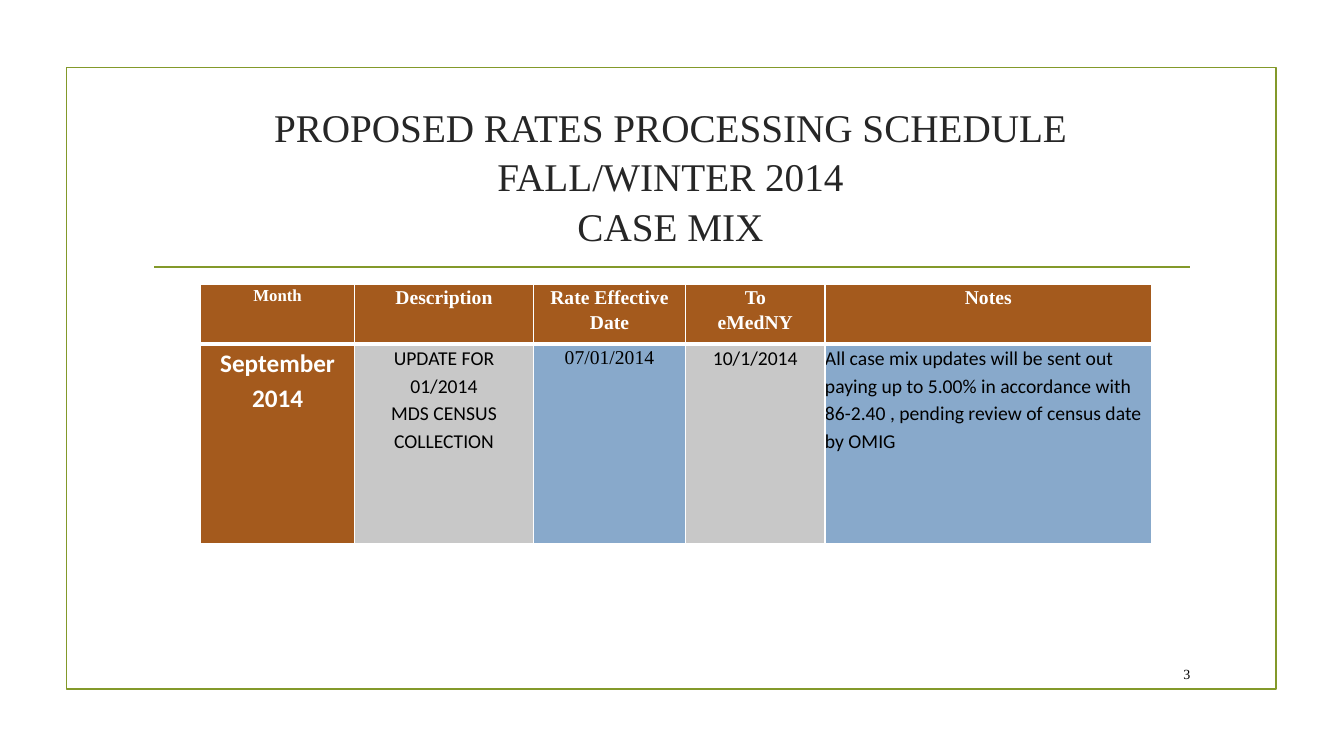
"""Build the case mix rates processing schedule slide."""
import pptx
import pptx.dml.color
import pptx.enum.shapes
import pptx.enum.text
import pptx.oxml
import pptx.oxml.ns
import pptx.util

Cm, Pt = pptx.util.Cm, pptx.util.Pt
ALIGN = pptx.enum.text.PP_ALIGN
MIDDLE = pptx.enum.text.MSO_ANCHOR.MIDDLE
OLIVE, BROWN, GREY, BLUE = "83992A", "A45A1D", "C8C8C8", "88A9CB"
WHITE, BLACK, CHARCOAL = "FFFFFF", "000000", "262626"
SERIF, SANS = "Times New Roman", "Calibri"


def color(code):
    return pptx.dml.color.RGBColor.from_string(code)


def format_text(para, align, name, size, code, bold=False, spacing=1.0):
    for key, value in {"alignment": align, "line_spacing": spacing}.items():
        setattr(para, key, value)
    for span in para.runs:
        for key, value in {"name": name, "size": Pt(size), "bold": bold}.items():
            setattr(span.font, key, value)
        span.font.color.rgb = color(code)


deck = pptx.Presentation()
deck.slide_width, deck.slide_height = Cm(33.87), Cm(19.05)
page = deck.slides.add_slide(deck.slide_layouts.get_by_name("Title Only"))

frame = page.shapes.add_shape(
    pptx.enum.shapes.MSO_SHAPE.RECTANGLE, Cm(1.68), Cm(1.7), Cm(30.48), Cm(15.67))
frame.shadow.inherit = False
frame.fill.background()
rule = page.shapes.add_connector(
    pptx.enum.shapes.MSO_CONNECTOR.STRAIGHT, Cm(3.89), Cm(6.73), Cm(30), Cm(6.73))
rule._element.spPr.append(pptx.oxml.parse_xml(
    f"<a:effectLst {pptx.oxml.ns.nsdecls('a')}/>"))
for outline in (frame.line, rule.line):
    outline.color.rgb = color(OLIVE)
    outline.width = Pt(1.25)

title = page.shapes.title
place = {"left": 3.56, "top": 2.24, "width": 26.67, "height": 4.34}
for key, value in place.items():
    setattr(title, key, Cm(value))
title.text_frame.vertical_anchor = MIDDLE
title.text_frame.auto_size = pptx.enum.text.MSO_AUTO_SIZE.NONE
para = title.text_frame.paragraphs[0]
para.add_run().text = "PROPOSED RATES PROCESSING SCHEDULE FALL/WINTER 2014"
para.add_line_break()
para.add_run().text = "CASE MIX"
format_text(para, ALIGN.CENTER, SERIF, 28, CHARCOAL, spacing=1.05)

NOTE = ("All case mix updates will be sent out paying up to 5.00% in accordance "
        "with 86-2.40 , pending review of census date by OMIG")
rows = [
    [(["Month"], BROWN, SERIF, 12),
     (["Description"], BROWN, SERIF, 14),
     (["Rate Effective Date"], BROWN, SERIF, 14),
     (["To", "eMedNY"], BROWN, SERIF, 14),
     (["Notes"], BROWN, SERIF, 14)],
    [(["September", "2014"], BROWN, SANS, 18),
     (["UPDATE FOR", "01/2014", "MDS CENSUS", "COLLECTION"], GREY, SANS, 14),
     (["07/01/2014"], BLUE, SERIF, 14),
     (["10/1/2014"], GREY, SANS, 14),
     ([NOTE], BLUE, SANS, 14)],
]
widths, heights = [3.89, 4.5, 3.84, 3.51, 8.23], [1.5, 5.03]
table = page.shapes.add_table(
    len(rows), len(widths), Cm(5.05), Cm(7.16), Cm(sum(widths)), Cm(sum(heights))).table
table.first_row = table.horz_banding = False
for column, width in zip(table.columns, widths):
    column.width = Cm(width)
for row, height in zip(table.rows, heights):
    row.height = Cm(height)

for row_index, row in enumerate(rows):
    for column_index, (lines, fill, name, size) in enumerate(row):
        cell = table.cell(row_index, column_index)
        for side in ("left", "right", "top", "bottom"):
            setattr(cell, f"margin_{side}", 0)
        thick_side = "B" if row_index == 0 else "T"
        for side in "LRTB":
            weight = Pt(3 if side == thick_side else 1)
            cell._tc.get_or_add_tcPr().append(pptx.oxml.parse_xml(
                f"<a:ln{side} {pptx.oxml.ns.nsdecls('a')} w='{weight}'><a:solidFill>"
                f"<a:srgbClr val='{WHITE}'/></a:solidFill></a:ln{side}>"))
        cell.fill.solid()
        cell.fill.fore_color.rgb = color(fill)
        cell.text_frame.text = "\n".join(lines)
        is_heading = fill == BROWN
        for para in cell.text_frame.paragraphs:
            format_text(para, ALIGN.LEFT if lines == [NOTE] else ALIGN.CENTER, name, size,
                        WHITE if is_heading else BLACK, is_heading, 1.15)

number_box = page.shapes.add_textbox(Cm(28.75), Cm(16.59), Cm(1.5), Cm(0.79))
number_box.text_frame.word_wrap = True
number_box.text_frame.vertical_anchor = MIDDLE
number_box.text_frame.text = "3"
format_text(number_box.text_frame.paragraphs[0], ALIGN.RIGHT, SERIF, 10, BLACK)

deck.save("out.pptx")
